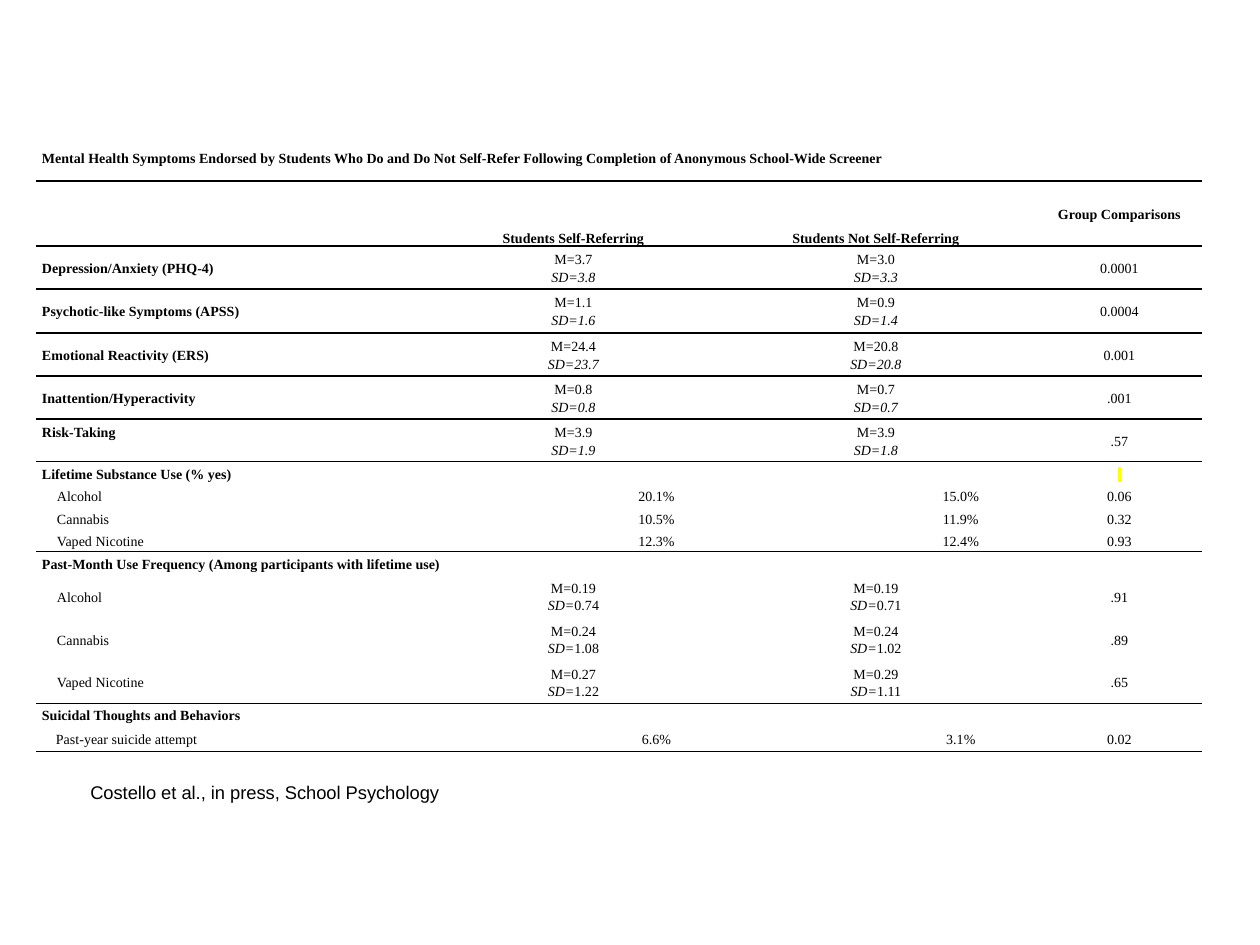
import lxml.etree
import pptx
import pptx.dml.color
import pptx.enum.text
import pptx.oxml.ns
import pptx.util

SCALE = 914400 // 126
SERIF = "Times New Roman"
BLACK = "000000"
NO_GRID_STYLE = "{2D5ABB26-0587-4C30-8999-92F81FD0307C}"
COLUMNS = [396, 166, 117, 170, 152, 165]
ROWS = [47, 65, 43, 44, 43, 43, 43, 23, 22, 23, 22, 23, 43, 43, 43, 23, 25]
RULED_ROWS = [*range(7), 10, 14, 16]
ANCHOR = pptx.enum.text.MSO_ANCHOR
ALIGN = pptx.enum.text.PP_ALIGN

TITLE = ("Mental Health Symptoms Endorsed by Students Who Do and Do Not Self-Refer "
         "Following Completion of Anonymous School-Wide Screener")
SYMPTOMS = [
    ("Depression/Anxiety (PHQ-4)", ("3.7", "3.8"), ("3.0", "3.3"), "0.0001"),
    ("Psychotic-like Symptoms (APSS)", ("1.1", "1.6"), ("0.9", "1.4"), "0.0004"),
    ("Emotional Reactivity (ERS)", ("24.4", "23.7"), ("20.8", "20.8"), "0.001"),
    ("Inattention/Hyperactivity", ("0.8", "0.8"), ("0.7", "0.7"), ".001"),
    ("Risk-Taking", ("3.9", "1.9"), ("3.9", "1.8"), ".57"),
]
LIFETIME_USE = [
    ("Alcohol", "20.1%", "15.0%", "0.06"),
    ("Cannabis", "10.5%", "11.9%", "0.32"),
    ("Vaped Nicotine", "12.3%", "12.4%", "0.93"),
]
MONTHLY_USE = [
    ("Alcohol", ("0.19", "0.74"), ("0.19", "0.71"), ".91"),
    ("Cannabis", ("0.24", "1.08"), ("0.24", "1.02"), ".89"),
    ("Vaped Nicotine", ("0.27", "1.22"), ("0.29", "1.11"), ".65"),
]
SUICIDE_ATTEMPT = ("Past-year suicide attempt", "6.6%", "3.1%", "0.02")


def px(length):
    return pptx.util.Emu(length * SCALE)


def color(value):
    return pptx.dml.color.RGBColor.from_string(value)


def add_child(parent, tag, **attributes):
    return lxml.etree.SubElement(parent, pptx.oxml.ns.qn(tag), **attributes)


def add_span(para, text, font=SERIF, size=8, bold=False, italic=False, highlight=None):
    span = para.add_run()
    span.text = text
    span.font.name = font
    span.font.size = pptx.util.Pt(size)
    span.font.bold = bold
    span.font.italic = italic
    span.font.color.rgb = color(BLACK)
    if highlight:
        mark = add_child(span._r.get_or_add_rPr(), "a:highlight")
        add_child(mark, "a:srgbClr", val=highlight)
        span.font.fill._xPr.find(pptx.oxml.ns.qn("a:solidFill")).addnext(mark)


def format_para(para, center=False, indent=0):
    para.line_spacing = 1.15
    para.alignment = ALIGN.CENTER if center else ALIGN.LEFT
    if indent:
        para._p.get_or_add_pPr().set("indent", str(px(indent)))


def write(cell, text, center=False, indent=0, anchor=ANCHOR.MIDDLE, **style):
    para = cell.text_frame.paragraphs[0]
    format_para(para, center, indent)
    add_span(para, text, **style)
    cell.vertical_anchor = anchor


def write_mean(cell, mean, deviation, italic):
    first = cell.text_frame.paragraphs[0]
    second = cell.text_frame.add_paragraph()
    for para in (first, second):
        format_para(para, center=True)
    add_span(first, f"M={mean}")
    add_span(second, "SD=", italic=True)
    add_span(second, deviation, italic=italic)
    cell.vertical_anchor = ANCHOR.MIDDLE


def rule_below(cell):
    line = lxml.etree.Element(pptx.oxml.ns.qn("a:lnB"), w="12700")
    add_child(add_child(line, "a:solidFill"), "a:srgbClr", val=BLACK)
    cell._tc.get_or_add_tcPr().insert(0, line)


def merge(table, row, first, last):
    cell = table.cell(row, first)
    cell.merge(table.cell(row, last))
    return cell


def add_grid(page):
    frame = page.shapes.add_table(len(ROWS), len(COLUMNS), px(36), px(134),
                                  px(sum(COLUMNS)), px(sum(ROWS)))
    table = frame.table
    table.first_row = table.horz_banding = False
    table._tbl.tblPr.find(pptx.oxml.ns.qn("a:tableStyleId")).text = NO_GRID_STYLE
    for column, width in zip(table.columns, COLUMNS):
        column.width = px(width)
    for index, (row, height) in enumerate(zip(table.rows, ROWS)):
        row.height = px(height)
        for cell in row.cells:
            cell.margin_left = cell.margin_right = px(6)
            cell.margin_top = cell.margin_bottom = 0
            cell.fill.background()
            add_child(cell.text_frame.paragraphs[0]._p, "a:endParaRPr", sz="800")
            if index in RULED_ROWS:
                rule_below(cell)
    return table


def fill_means(table, start, records, italic, **label_style):
    for row, (label, referring, others, p_value) in enumerate(records, start):
        write(table.cell(row, 0), label, **label_style)
        write_mean(merge(table, row, 1, 2), *referring, italic)
        write_mean(merge(table, row, 3, 4), *others, italic)
        write(table.cell(row, 5), p_value, center=True)


def fill_percents(table, start, records, indent):
    for row, (label, *values) in enumerate(records, start):
        write(table.cell(row, 0), label, indent=indent)
        for column, value in zip((2, 4, 5), values):
            write(table.cell(row, column), value, center=True)


def fill_headings(table):
    write(merge(table, 0, 0, 5), TITLE, bold=True)
    for first, heading in ((1, "Students Self-Referring"), (3, "Students Not Self-Referring")):
        write(merge(table, 1, first, first + 1), heading, center=True,
              anchor=ANCHOR.BOTTOM, bold=True)
    write(table.cell(1, 5), "Group Comparisons", center=True, bold=True)
    write(table.cell(7, 0), "Lifetime Substance Use (% yes)", bold=True)
    write(table.cell(7, 5), " ", center=True, highlight="FFFF00")
    write(merge(table, 11, 0, 5),
          "Past-Month Use Frequency (Among participants with lifetime use)", bold=True)
    write(merge(table, 15, 0, 5), "Suicidal Thoughts and Behaviors", bold=True)


def add_citation(page, text):
    box = page.shapes.add_textbox(px(78), px(775), px(380), px(35))
    box.text_frame.word_wrap = False
    box.text_frame.auto_size = pptx.enum.text.MSO_AUTO_SIZE.SHAPE_TO_FIT_TEXT
    add_span(box.text_frame.paragraphs[0], text, font="Arial", size=10.5)


def main():
    deck = pptx.Presentation()
    deck.slide_width, deck.slide_height = px(1260), px(945)
    page = deck.slides.add_slide(deck.slide_layouts[6])
    table = add_grid(page)
    fill_headings(table)
    fill_means(table, 2, SYMPTOMS, italic=True, bold=True)
    risk_taking = table.cell(6, 0)
    risk_taking.vertical_anchor = ANCHOR.TOP
    risk_taking.margin_top = px(4)
    fill_percents(table, 8, LIFETIME_USE, indent=15)
    fill_means(table, 12, MONTHLY_USE, italic=False, indent=15)
    fill_percents(table, 16, [SUICIDE_ATTEMPT], indent=14)
    add_citation(page, "Costello et al., in press, School Psychology")
    deck.save("out.pptx")


if __name__ == "__main__":
    main()
